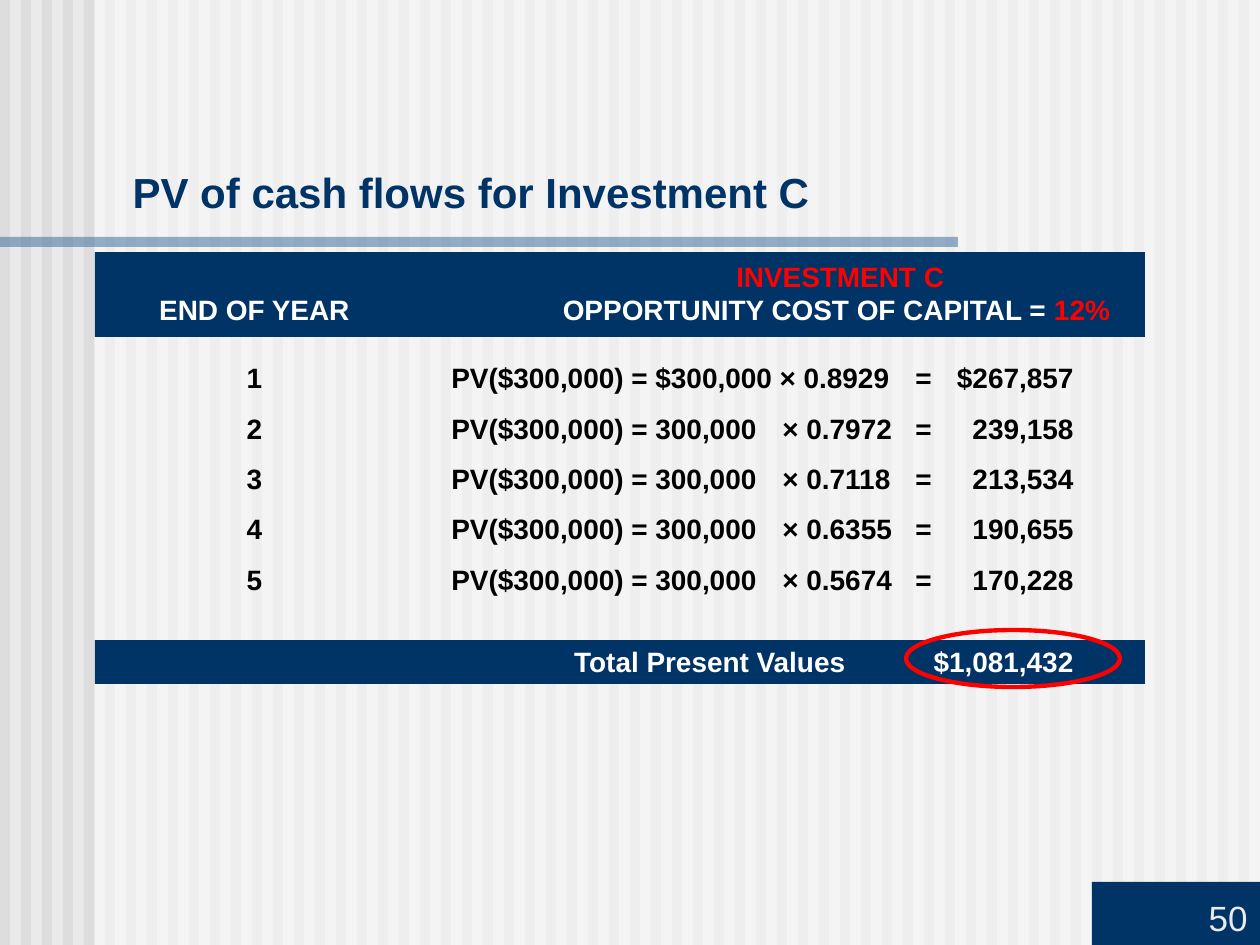
from dataclasses import dataclass

from lxml import etree
from pptx import Presentation
from pptx.dml.color import RGBColor
from pptx.enum.shapes import MSO_SHAPE
from pptx.enum.text import MSO_ANCHOR, PP_ALIGN
from pptx.oxml.ns import qn
from pptx.util import Emu, Pt

RECT, OVAL = MSO_SHAPE.RECTANGLE, MSO_SHAPE.OVAL
BOTTOM, TOP = MSO_ANCHOR.BOTTOM, MSO_ANCHOR.TOP
LEFT, RIGHT = PP_ALIGN.LEFT, PP_ALIGN.RIGHT


@dataclass(frozen=True)
class Theme:
    font: str = "Arial"
    back: str = "EAEAEA"
    stripe: str = "DDDDDD"
    white: str = "FFFFFF"
    navy: str = "003366"
    blue: str = "336699"
    red: str = "FF0000"
    black: str = "000000"
    title: int = 24
    body: int = 16
    number: int = 20


T = Theme()

TITLE = "PV of cash flows for Investment C"
PAGE = "50"
HEADER = [
    [("\t\t ", T.white), ("INVESTMENT C", T.red)],
    [("\tEND OF YEAR\tOPPORTUNITY COST OF CAPITAL = ", T.white), ("12%", T.red)],
]
# year, cash flow with the gap after it, discount factor, present value
FLOWS = [
    (1, "$300,000 ", "0.8929", "$267,857"),
    (2, "300,000\t", "0.7972", "239,158"),
    (3, "300,000\t", "0.7118", "213,534"),
    (4, "300,000\t", "0.6355", "190,655"),
    (5, "300,000\t", "0.5674", "170,228"),
]
TOTAL = ("Total Present Values", "$1,081,432")

# Tab stops in px from the left of the text
HEADER_TABS = [(189, "ctr"), (771, "ctr")]
FLOW_TABS = [(213, "ctr"), (410, "l"), (741, "l"), (874, "l"), (1032, "r")]
TOTAL_TABS = [(804, "r"), (1032, "r")]

W, H = 1260, 945
STRIPE_PITCH, STRIPE_W = 21, 10
BAND_X, BAND_W = 95, 1050


def px(n):
    return Emu(n * 914400 // 126)


def rgb(value):
    return RGBColor.from_string(value)


def place(shape, x, y, w, h):
    shape.left, shape.top, shape.width, shape.height = map(px, (x, y, w, h))


def add_rect(s, x, y, w, h, color, alpha=None):
    sp = s.shapes.add_shape(RECT, px(x), px(y), px(w), px(h))
    sp.shadow.inherit = False
    sp.line.fill.background()
    sp.fill.solid()
    sp.fill.fore_color.rgb = rgb(color)
    if alpha is not None:
        clr = sp._element.spPr.find(qn("a:solidFill"))[0]
        etree.SubElement(clr, qn("a:alpha")).set("val", str(alpha * 1000))
    return sp


def style(font, size, color, bold=True):
    font.name, font.size, font.bold = T.font, Pt(size), bold
    font.color.rgb = rgb(color)


def set_tabs(p, tabs):
    lst = etree.SubElement(p._p.get_or_add_pPr(), qn("a:tabLst"))
    for pos, align in tabs:
        tab = etree.SubElement(lst, qn("a:tab"))
        tab.set("pos", str(px(pos)))
        tab.set("algn", align)


def add_tabbed_text(s, x, y, w, h, lines, tabs, spacing=1.0):
    """Each line is a list of (text, colour) runs set on the tab stops."""
    tf = s.shapes.add_textbox(px(x), px(y), px(w), px(h)).text_frame
    tf.word_wrap = True
    for i, line in enumerate(lines):
        p = tf.add_paragraph() if i else tf.paragraphs[0]
        p.line_spacing = spacing
        set_tabs(p, tabs)
        for text, color in line:
            r = p.add_run()
            r.text = text
            style(r.font, T.body, color)


def add_backdrop(s):
    s.background.fill.solid()
    s.background.fill.fore_color.rgb = rgb(T.back)
    for x in range(0, W, STRIPE_PITCH):
        add_rect(s, x, 0, STRIPE_W, H, T.stripe)
    add_rect(s, BAND_X, 0, W - BAND_X, H, T.white, alpha=50)
    add_rect(s, 0, 237, 958, 10, T.blue, alpha=50)


def add_title(s):
    title = s.shapes.title
    s.shapes._spTree.append(title._element)  # in front of the backdrop
    place(title, 120, 93, 1125, 130)
    tf = title.text_frame
    tf.text = TITLE
    tf.vertical_anchor = BOTTOM
    p = tf.paragraphs[0]
    p.alignment = LEFT
    style(p.runs[0].font, T.title, T.navy)


def add_page_number(s):
    tf = add_rect(s, 1092, 882, 168, 63, T.navy).text_frame
    tf.text = PAGE
    tf.vertical_anchor = BOTTOM
    p = tf.paragraphs[0]
    p.alignment = RIGHT
    style(p.runs[0].font, T.number, T.back, bold=False)


def add_cash_flows(s):
    add_rect(s, BAND_X, 252, BAND_W, 85, T.navy)
    add_tabbed_text(s, 53, 253, 1166, 81, HEADER, HEADER_TABS)
    rows = [[(f"\t{year}\tPV($300,000) = {flow}× {factor}\t=\t{value}", T.black)]
            for year, flow, factor, value in FLOWS]
    add_tabbed_text(s, 29, 338, 1188, 266, rows, FLOW_TABS, spacing=1.5)
    add_rect(s, BAND_X, 640, BAND_W, 44, T.navy)
    total = [[("\t" + "\t".join(TOTAL), T.white)]]
    add_tabbed_text(s, 29, 638, 1147, 47, total, TOTAL_TABS)


def add_total_ring(s):
    ring = s.shapes.add_shape(OVAL, px(906), px(630), px(214), px(57))
    ring.shadow.inherit = False
    ring.fill.background()
    ring.line.color.rgb = rgb(T.red)
    ring.line.width = Pt(2.5)


def main():
    prs = Presentation()
    prs.slide_width, prs.slide_height = px(W), px(H)
    s = prs.slides.add_slide(prs.slide_layouts[5])
    add_backdrop(s)
    add_page_number(s)
    add_title(s)
    add_cash_flows(s)
    add_total_ring(s)
    prs.save("out.pptx")


if __name__ == "__main__":
    main()
